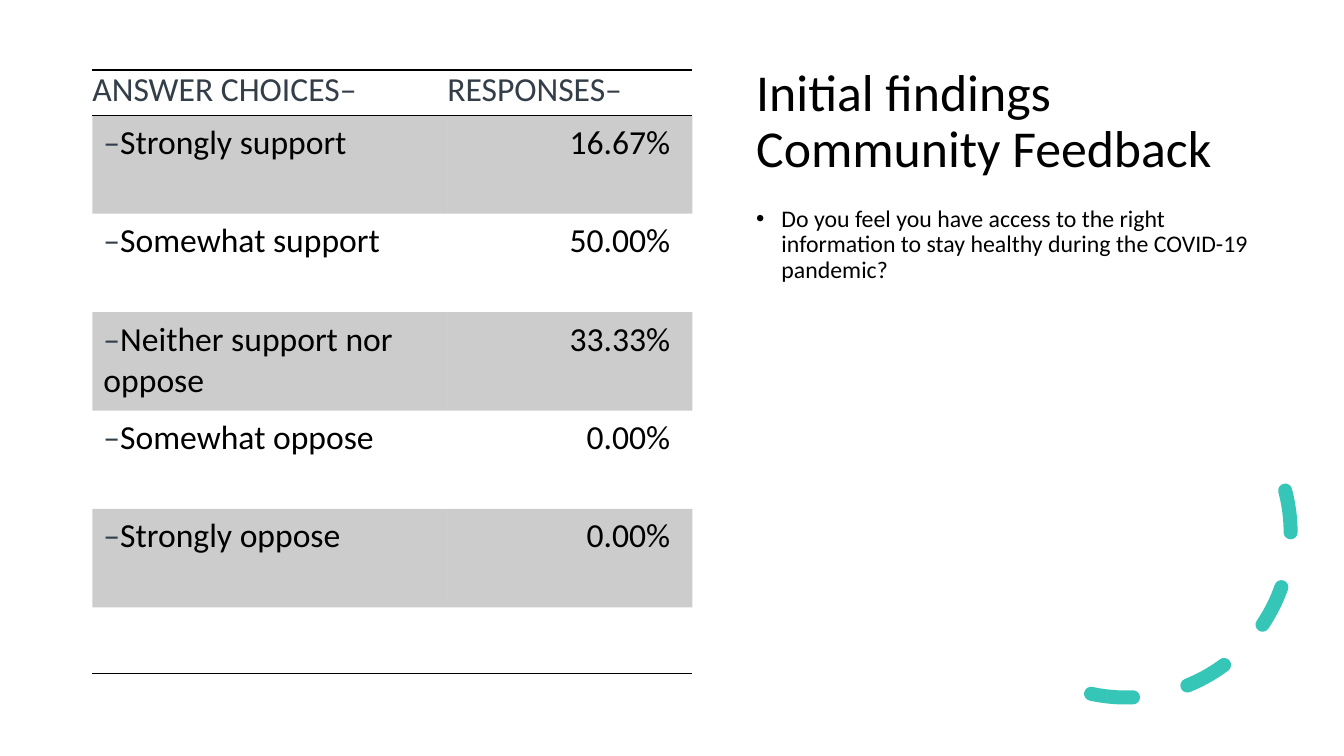
import pptx
import pptx.util
import pptx.dml.color
import pptx.enum.dml
import pptx.enum.shapes
import pptx.enum.text
import pptx.oxml
import pptx.oxml.ns

Inch = pptx.util.Inches
Pt = pptx.util.Pt
RGB = pptx.dml.color.RGBColor
Align = pptx.enum.text.PP_ALIGN
Anchor = pptx.enum.text.MSO_ANCHOR
Preset = pptx.enum.shapes.MSO_SHAPE
qn = pptx.oxml.ns.qn

BLACK = RGB(0x00, 0x00, 0x00)
WHITE = RGB(0xFF, 0xFF, 0xFF)
SLATE = RGB(0x33, 0x3E, 0x48)
TEAL = RGB(0x2C, 0xC3, 0xB4)
FONT = "Calibri"
WIDE, HIGH = 13.33, 7.5
NO_STYLE = "{2D5ABB26-0587-4C30-8999-92F81FD0307C}"

HEADS = ("ANSWER CHOICES–", "RESPONSES–")
ANSWERS = (
    ("Strongly support", "16.67%"),
    ("Somewhat support", "50.00%"),
    ("Neither support nor oppose", "33.33%"),
    ("Somewhat oppose", "0.00%"),
    ("Strongly oppose", "0.00%"),
)


def put(item, values):
    """Set each named attribute of item."""
    for name, value in values.items():
        setattr(item, name, value)


def place(shape, box):
    put(shape, dict(zip(("left", "top", "width", "height"), map(Inch, box))))


def write(para, text, size, color):
    run = para.add_run()
    run.text = text
    put(run.font, {"name": FONT, "size": Pt(size)})
    run.font.color.rgb = color


def fade(fill, share):
    """Give a solid fill an opacity in percent."""
    color = fill.fore_color._xFill.find(qn("a:srgbClr"))
    color.append(color.makeelement(qn("a:alpha"), {"val": str(share * 1000)}))


def rule(cell, sides):
    """Draw black 1 pt borders on the named sides, top before bottom."""
    props = cell._tc.get_or_add_tcPr()
    for spot, side in enumerate(sides):
        props.insert(spot, pptx.oxml.parse_xml(
            f'<a:{side} xmlns:a="http://schemas.openxmlformats.org/drawingml/2006/main"'
            f' w="{Pt(1)}"><a:solidFill><a:srgbClr val="{BLACK}"/></a:solidFill>'
            f'</a:{side}>'))


def pad(cell, left, top, right, low):
    put(cell, {"margin_left": Inch(left), "margin_top": Inch(top),
               "margin_right": Inch(right), "margin_bottom": Inch(low)})


def add_panel(slide, box):
    """Place the white panel behind everything else."""
    panel = slide.shapes.add_shape(Preset.RECTANGLE, *map(Inch, box))
    panel.shadow.inherit = False
    panel.fill.solid()
    panel.fill.fore_color.rgb = WHITE
    panel.line.fill.background()
    slide.shapes._spTree.insert(2, panel._element)


def add_grid(slide, box):
    """Place the table of answers and their shares."""
    count = len(ANSWERS)
    frame = slide.shapes.add_table(count + 2, 2, *map(Inch, box))
    grid = frame.table
    put(grid, {"first_row": False, "horz_banding": False})
    grid._tbl.tblPr.find(qn("a:tableStyleId")).text = NO_STYLE
    first = 3.52
    for col, wide in zip(grid.columns, (first, box[2] - first)):
        col.width = Inch(wide)
    head, foot = 0.45, 0.66
    step = (box[3] - head - foot) / count
    for row, tall in zip(grid.rows, [head] + [step] * count + [foot]):
        row.height = Inch(tall)

    for col, text in enumerate(HEADS):
        cell = grid.cell(0, col)
        pad(cell, 0, 0, 0, 0)
        write(cell.text_frame.paragraphs[0], text, 24, SLATE)
        rule(cell, ("lnT", "lnB"))
        rule(grid.cell(count + 1, col), ("lnB",))

    for row, (answer, share) in enumerate(ANSWERS, 1):
        name, value = grid.cell(row, 0), grid.cell(row, 1)
        for cell in (name, value):
            pad(cell, 0.11, 0.07, 0.22, 0.07)
            if row % 2:
                cell.fill.solid()
                cell.fill.fore_color.rgb = BLACK
                fade(cell.fill, 20)
        para = name.text_frame.paragraphs[0]
        write(para, "–", 24, SLATE)
        write(para, answer, 24, BLACK)
        para = value.text_frame.paragraphs[0]
        para.alignment = Align.RIGHT
        write(para, share, 24, BLACK)


def fill_holder(holder, box, text, size, anchor, gap):
    """Move a placeholder to box and write its one paragraph."""
    place(holder, box)
    frame = holder.text_frame
    put(frame, {"word_wrap": True, "vertical_anchor": anchor,
                "auto_size": pptx.enum.text.MSO_AUTO_SIZE.NONE})
    para = frame.paragraphs[0]
    put(para, {"alignment": Align.LEFT, "line_spacing": 0.9,
               "space_before": Pt(gap)})
    write(para, text, size, BLACK)
    return para


def add_words(slide, left, width):
    """Place the title with the question below it."""
    fill_holder(slide.shapes.title, (left, 0.58, width, 1.27),
                "Initial findings Community Feedback", 37, Anchor.MIDDLE, 0)
    para = fill_holder(
        slide.placeholders[1], (left, 2, width, 4.8),
        "Do you feel you have access to the right information to stay "
        "healthy during the COVID-19 pandemic?", 17, Anchor.TOP, 10)
    props = para._p.get_or_add_pPr()
    props.set("marL", str(Inch(0.25)))
    props.set("indent", str(Inch(-0.25)))


def add_arc(slide, box):
    """Place the dashed round-ended arc."""
    arc = slide.shapes.add_shape(Preset.ARC, *map(Inch, box))
    arc.shadow.inherit = False
    arc.rotation = 104.5
    arc.adjustments[0] = 144.42
    arc.adjustments[1] = 0
    arc.fill.background()
    arc.line.color.rgb = TEAL
    put(arc.line, {"width": Pt(10),
                   "dash_style": pptx.enum.dml.MSO_LINE.DASH})
    fade(arc.line.fill, 95)
    arc.line._get_or_add_ln().set("cap", "rnd")


def main():
    deck = pptx.Presentation()
    put(deck, {"slide_width": Inch(WIDE), "slide_height": Inch(HIGH)})
    slide = deck.slides.add_slide(deck.slide_layouts[1])
    add_panel(slide, (0, 0, WIDE, HIGH))
    add_words(slide, 7.4, 5.22)
    add_arc(slide, (9.53, 3.65, 3.27, 3.27))
    add_grid(slide, (Pt(66).inches, Pt(50).inches, 5.95, 5.99))
    deck.save("out.pptx")


if __name__ == "__main__":
    main()
